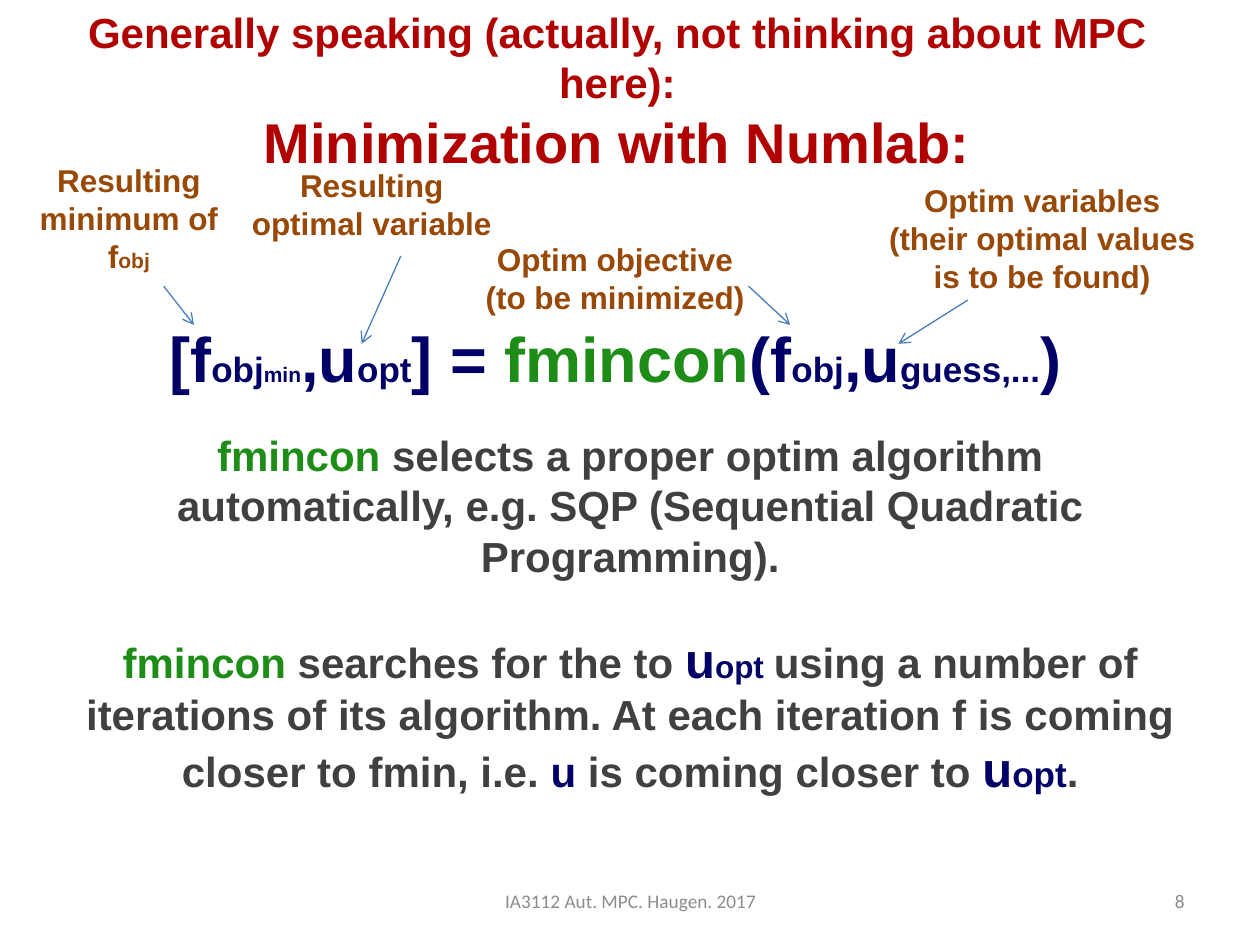
import dataclasses

import lxml.etree
import pptx
import pptx.dml.color
import pptx.enum.shapes
import pptx.enum.text
import pptx.oxml.ns
import pptx.util

Cm = pptx.util.Cm
Pt = pptx.util.Pt
Align = pptx.enum.text.PP_ALIGN
Anchor = pptx.enum.text.MSO_ANCHOR


@dataclasses.dataclass(frozen=True)
class Theme:
    """Colours, fonts and type sizes of the slide."""
    title: str = "B00000"
    label: str = "984807"
    symbol: str = "000066"
    function: str = "1D8D17"
    body: str = "404040"
    footer: str = "8C8C8C"
    arrow: str = "4B7EBC"
    font: str = "Arial"
    footer_font: str = "Calibri"
    equation_size: int = 36
    heading_size: int = 32
    variable_size: int = 28
    body_size: int = 24
    subscript_size: int = 20
    label_size: int = 18
    small_size: int = 12
    footer_size: int = 11


theme = Theme()


def write(shape, box, paragraphs, font=theme.font, bold=True, align=Align.CENTER,
          anchor=Anchor.TOP, gap=0):
    """Place a shape and fill it with paragraphs of (text, size, colour) runs."""
    shape.left, shape.top, shape.width, shape.height = [Cm(length) for length in box]
    frame = shape.text_frame
    frame.word_wrap = True
    frame.auto_size = pptx.enum.text.MSO_AUTO_SIZE.NONE
    frame.vertical_anchor = anchor
    for index, runs in enumerate(paragraphs):
        paragraph = frame.add_paragraph() if index else frame.paragraphs[0]
        paragraph.alignment = align
        paragraph.space_before = Pt(gap if index else 0)
        for text, size, colour in runs:
            for number, line in enumerate(text.split("\n")):
                if number:
                    paragraph.add_line_break()
                run = paragraph.add_run()
                run.text = line
                run.font.name = font
                run.font.size = Pt(size)
                run.font.bold = bold
                run.font.color.rgb = pptx.dml.color.RGBColor.from_string(colour)


def add_arrow(shapes, start_x, start_y, end_x, end_y):
    """Draw a thin arrow from a label to its part of the equation."""
    arrow = shapes.add_connector(pptx.enum.shapes.MSO_CONNECTOR.STRAIGHT,
                                 Cm(start_x), Cm(start_y), Cm(end_x), Cm(end_y))
    arrow.line.color.rgb = pptx.dml.color.RGBColor.from_string(theme.arrow)
    arrow.line.width = Pt(0.75)
    qualify = pptx.oxml.ns.qn
    properties = arrow._element.spPr
    lxml.etree.SubElement(properties.find(qualify("a:ln")), qualify("a:tailEnd"), type="arrow")
    lxml.etree.SubElement(properties, qualify("a:effectLst"))


presentation = pptx.Presentation()
presentation.slide_width = Cm(25.4)
presentation.slide_height = Cm(19.05)
slide = presentation.slides.add_slide(presentation.slide_layouts[5])
shapes = slide.shapes

write(shapes.title, (0.38, 0, 24.13, 2.64), [
    [("Generally speaking (actually, not thinking about MPC here):",
      theme.body_size, theme.title)],
    [("Minimization with Numlab:", theme.heading_size, theme.title)],
])

equation = [
    ("[f", theme.equation_size, theme.symbol),
    ("obj", theme.subscript_size, theme.symbol),
    ("min", theme.small_size, theme.symbol),
    (",u", theme.equation_size, theme.symbol),
    ("opt", theme.subscript_size, theme.symbol),
    ("] = ", theme.equation_size, theme.symbol),
    ("fmincon", theme.equation_size, theme.function),
    ("(f", theme.equation_size, theme.symbol),
    ("obj", theme.subscript_size, theme.symbol),
    (",u", theme.equation_size, theme.symbol),
    ("guess,...", theme.subscript_size, theme.symbol),
    (")", theme.equation_size, theme.symbol),
]
algorithm = [
    ("fmincon ", theme.body_size, theme.function),
    ("selects a proper optim algorithm automatically, e.g. SQP "
     "(Sequential Quadratic Programming).", theme.body_size, theme.body),
]
iterations = [
    ("fmincon ", theme.body_size, theme.function),
    ("searches for the to ", theme.body_size, theme.body),
    ("u", theme.variable_size, theme.symbol),
    ("opt", theme.label_size, theme.symbol),
    (" ", theme.subscript_size, theme.body),
    ("using a number of iterations of its algorithm. At each iteration f is "
     "coming closer to fmin, i.e. ", theme.body_size, theme.body),
    ("u ", theme.body_size, theme.symbol),
    ("is coming closer to ", theme.body_size, theme.body),
    ("u", theme.variable_size, theme.symbol),
    ("opt", theme.subscript_size, theme.symbol),
    (".", theme.body_size, theme.body),
]
for box, paragraphs in [
    ((1.7, 6.32, 21.41, 1.8), [equation]),
    ((1.3, 8.53, 22.81, 7.95), [algorithm, iterations]),
]:
    write(shapes.add_textbox(0, 0, 0, 0), box, paragraphs, gap=28)

# Each label comes with the arrow that leads from it to the equation.
labels = [
    ((0.3, 3.12, 4.6, 2.57), "Resulting\nminimum of\nf", "obj", (3.3, 5.77, 3.91, 6.55)),
    ((4.7, 3.23, 5.59, 2.06), "Resulting\noptimal variable", "", (8.08, 5.16, 7.29, 6.93)),
    ((8.31, 4.72, 8.18, 2.06), "Optim objective\n(to be minimized)", "",
     (15.09, 5.77, 15.93, 6.55)),
    ((16.92, 3.53, 8.18, 2.82), "Optim variables\n(their optimal values\nis to be found)", "",
     (19.51, 6.05, 18.11, 6.93)),
]
for box, text, subscript, arrow in labels:
    runs = [(text, theme.label_size, theme.label)]
    if subscript:
        runs.append((subscript, theme.small_size, theme.label))
    write(shapes.add_textbox(0, 0, 0, 0), box, [runs])
    add_arrow(shapes, *arrow)

for left, width, text, align in [
    (8.69, 8.05, "IA3112 Aut. MPC. Haugen. 2017", Align.CENTER),
    (18.21, 5.92, "8", Align.RIGHT),
]:
    write(shapes.add_textbox(0, 0, 0, 0), (left, 17.65, width, 1.02),
          [[(text, theme.footer_size, theme.footer)]],
          font=theme.footer_font, bold=False, align=align, anchor=Anchor.MIDDLE)

presentation.save("out.pptx")
